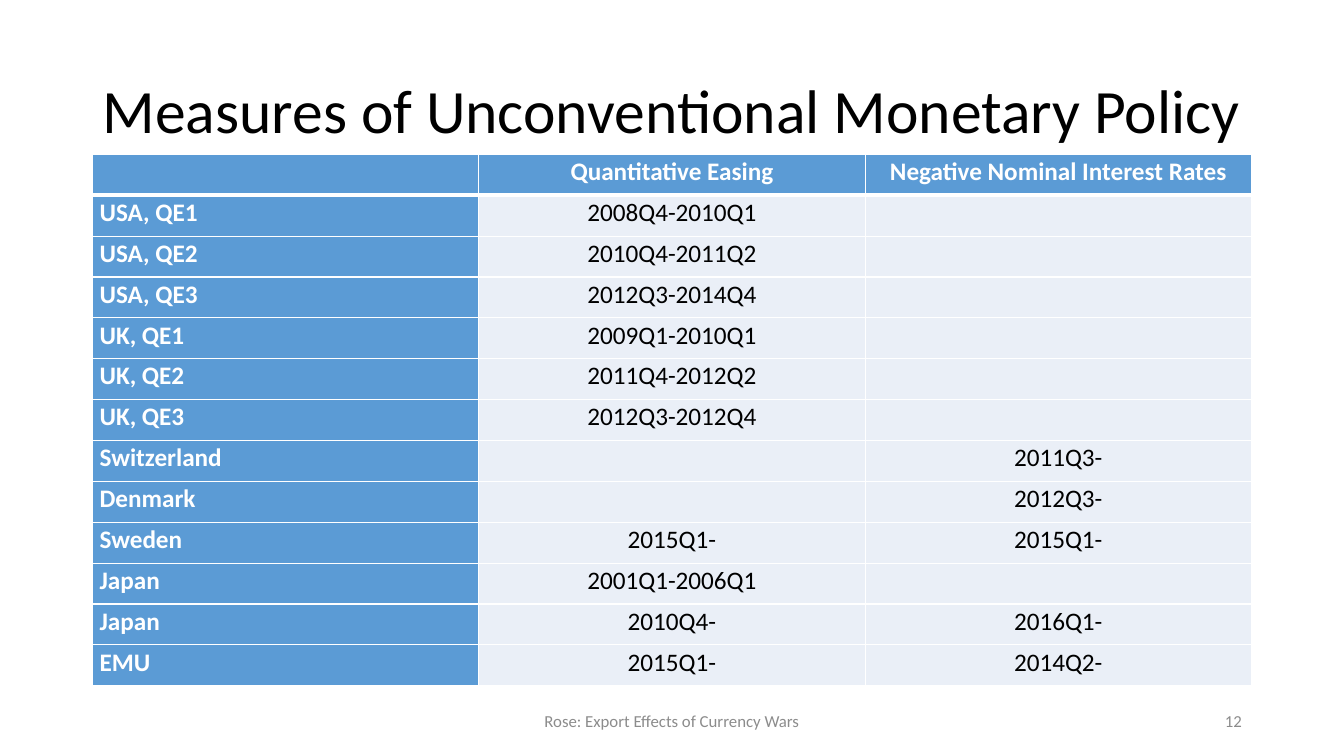
from lxml.etree import SubElement
from pptx import Presentation
from pptx.dml.color import RGBColor
from pptx.enum.text import MSO_ANCHOR, MSO_AUTO_SIZE, PP_ALIGN
from pptx.oxml.ns import qn
from pptx.util import Cm, Pt

COLORS = {
    "black": "000000",
    "white": "FFFFFF",
    "header": "5B9BD5",
    "body": "EAEFF7",
    "footer": "8C8C8C",
}
FONT = "Calibri"

POLICIES = [
    ("", "Quantitative Easing", "Negative Nominal Interest Rates"),
    ("USA, QE1", "2008Q4-2010Q1", ""),
    ("USA, QE2", "2010Q4-2011Q2", ""),
    ("USA, QE3", "2012Q3-2014Q4", ""),
    ("UK, QE1", "2009Q1-2010Q1", ""),
    ("UK, QE2", "2011Q4-2012Q2", ""),
    ("UK, QE3", "2012Q3-2012Q4", ""),
    ("Switzerland", "", "2011Q3-"),
    ("Denmark", "", "2012Q3-"),
    ("Sweden", "2015Q1-", "2015Q1-"),
    ("Japan", "2001Q1-2006Q1", ""),
    ("Japan", "2010Q4-", "2016Q1-"),
    ("EMU", "2015Q1-", "2014Q2-"),
]


def rgb(name):
    return RGBColor.from_string(COLORS[name])


def add_run(p, text, size, color, bold=False):
    r = p.add_run()
    r.text = text
    r.font.name = FONT
    r.font.size = Pt(size)
    r.font.bold = bold
    r.font.color.rgb = rgb(color)


def set_title(slide, text):
    sp = slide.shapes.title
    sp.left, sp.top, sp.width, sp.height = Cm(2.33), Cm(1.02), Cm(29.21), Cm(3.68)
    tf = sp.text_frame
    tf.auto_size = MSO_AUTO_SIZE.NONE
    tf.vertical_anchor = MSO_ANCHOR.MIDDLE
    p = tf.paragraphs[0]
    p.alignment = PP_ALIGN.LEFT
    p.line_spacing = 0.9
    add_run(p, text, 44, "black")


def set_borders(cell, top, bottom):
    """Draw white cell borders; top and bottom are widths in points."""
    tcPr = cell._tc.get_or_add_tcPr()
    widths = {"a:lnL": 1, "a:lnR": 1, "a:lnT": top, "a:lnB": bottom}
    for i, (tag, width) in enumerate(widths.items()):
        ln = SubElement(tcPr, qn(tag), w=str(Pt(width)))
        fill = SubElement(ln, qn("a:solidFill"))
        SubElement(fill, qn("a:srgbClr"), val=COLORS["white"])
        tcPr.insert(i, ln)


def format_cell(cell, text, row, col):
    heading = row == 0 or col == 0
    cell.fill.solid()
    cell.fill.fore_color.rgb = rgb("header" if heading else "body")
    cell.margin_left = cell.margin_right = Cm(0.18)
    cell.margin_top = cell.margin_bottom = 0
    set_borders(cell, top=3 if row == 1 else 1, bottom=3 if row == 0 else 1)
    if text:
        p = cell.text_frame.paragraphs[0]
        p.alignment = PP_ALIGN.CENTER if col else PP_ALIGN.LEFT
        p.line_spacing = 1.07
        add_run(p, text, 18, "white" if heading else "black", heading)


def add_policy_table(slide, rows):
    n_rows, n_cols = len(rows), len(rows[0])
    table = slide.shapes.add_table(
        n_rows, n_cols, Cm(2.33), Cm(3.89), Cm(29.21), Cm(1.03) * n_rows
    ).table
    table.first_col = True
    table.horz_banding = False
    for row, texts in enumerate(rows):
        for col, text in enumerate(texts):
            format_cell(table.cell(row, col), text, row, col)


def add_footer(slide, text, left, width, align):
    sp = slide.shapes.add_textbox(Cm(left), Cm(17.65), Cm(width), Cm(1.02))
    tf = sp.text_frame
    tf.word_wrap = True
    tf.vertical_anchor = MSO_ANCHOR.MIDDLE
    p = tf.paragraphs[0]
    p.alignment = align
    add_run(p, text, 12, "footer")


def main():
    prs = Presentation()
    prs.slide_width, prs.slide_height = Cm(33.87), Cm(19.05)
    slide = prs.slides.add_slide(prs.slide_layouts[5])
    set_title(slide, "Measures of Unconventional Monetary Policy")
    add_policy_table(slide, POLICIES)
    add_footer(slide, "12", 23.93, 7.62, PP_ALIGN.RIGHT)
    add_footer(slide, "Rose: Export Effects of Currency Wars", 11.22, 11.43, PP_ALIGN.CENTER)
    prs.save("out.pptx")


if __name__ == "__main__":
    main()
